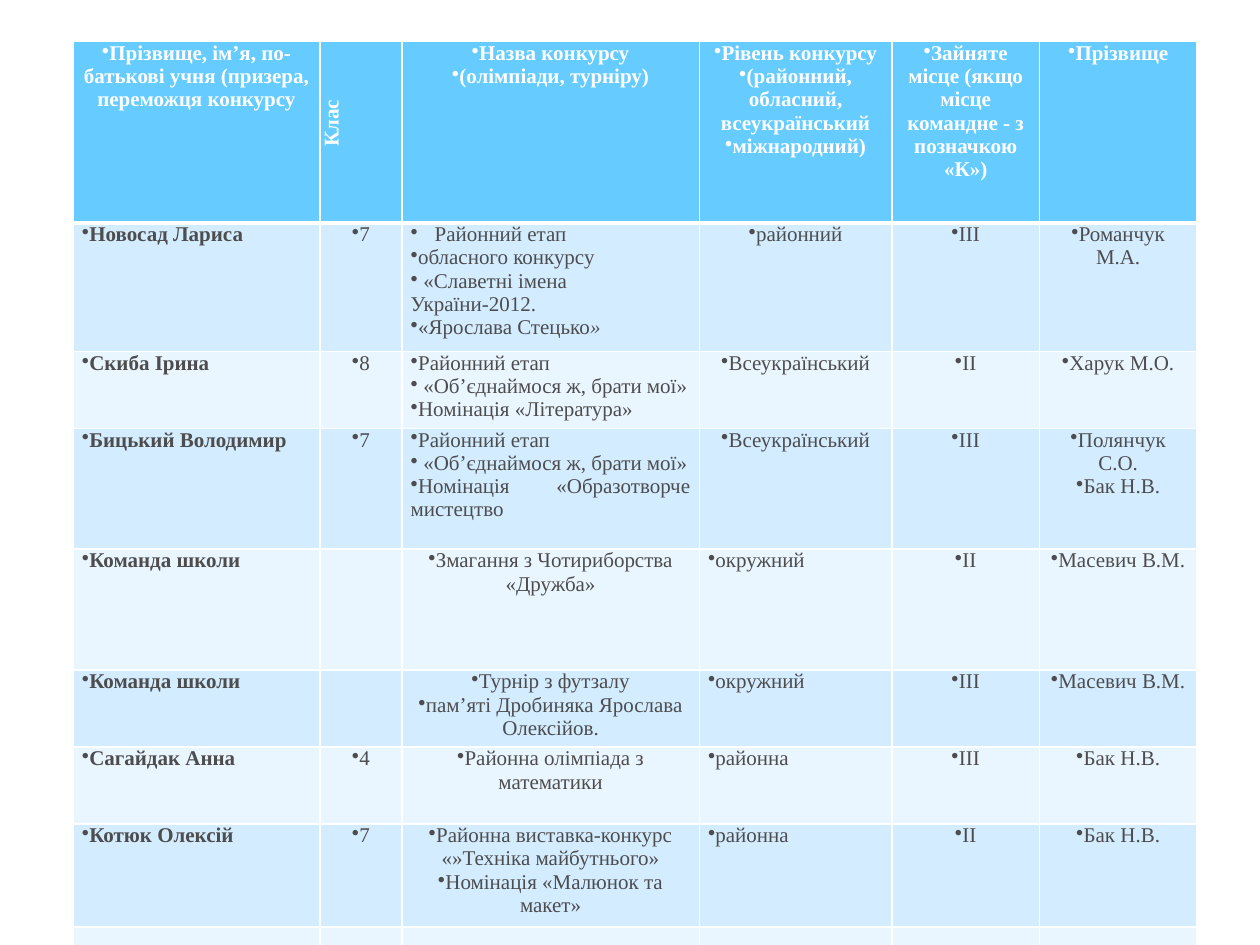
import pptx
import pptx.util
import pptx.dml.color
import pptx.enum.text
import pptx.oxml.ns
from lxml import etree

Inches = pptx.util.Inches
Pt = pptx.util.Pt
ALIGN = pptx.enum.text.PP_ALIGN
qn = pptx.oxml.ns.qn

COLUMN_WIDTHS = [1.96, 0.65, 2.36, 1.53, 1.17, 1.25]
ROW_HEIGHTS = [1.44, 1.02, 0.61, 0.96, 0.96, 0.61, 0.61, 0.82, 0.46]
ROWS = [
    ["Прізвище, ім’я, по-батькові учня (призера, переможця конкурсу", "Клас",
     "Назва конкурсу\n(олімпіади, турніру)",
     "Рівень конкурсу\n(районний, обласний, всеукраїнський\nміжнародний)",
     "Зайняте місце (якщо місце командне - з позначкою «К»)", "Прізвище"],
    ["Новосад Лариса", "7",
     "Районний етап\nобласного конкурсу\n «Славетні імена України-2012.\n«Ярослава Стецько",
     "районний", "ІІІ", "Романчук М.А."],
    ["Скиба Ірина", "8",
     "Районний етап\n «Об’єднаймося ж, брати мої»\nНомінація «Література»",
     "Всеукраїнський", "ІІ", "Харук М.О."],
    ["Бицький Володимир", "7",
     "Районний етап\n «Об’єднаймося ж, брати мої»\nНомінація «Образотворче мистецтво",
     "Всеукраїнський", "ІІІ", "Полянчук С.О.\nБак Н.В."],
    ["Команда школи", "", "Змагання з Чотириборства «Дружба»",
     "окружний", "ІІ", "Масевич В.М."],
    ["Команда школи", "", "Турнір з футзалу\nпам’яті Дробиняка Ярослава Олексійов.",
     "окружний", "ІІІ", "Масевич В.М."],
    ["Сагайдак Анна", "4", "Районна олімпіада з математики",
     "районна", "ІІІ", "Бак Н.В."],
    ["Котюк Олексій", "7",
     "Районна виставка-конкурс «»Техніка майбутнього»\nНомінація «Малюнок та макет»",
     "районна", "ІІ", "Бак Н.В."],
    [""] * 6,
]


def rgb(value):
    return pptx.dml.color.RGBColor.from_string(value)


def is_left(row, column):
    return row > 0 and (column == 0 or column == 2 and row <= 3 or column == 3 and row >= 4)


class Deck:
    font = "Times New Roman"
    size = 12
    header_fill = "66CCFF"
    band_fills = ["EAF6FF", "D3ECFF"]
    white = "FFFFFF"
    body = "4D4D4D"

    def __init__(self, width, height):
        self.prs = pptx.Presentation()
        self.prs.slide_width = Inches(width)
        self.prs.slide_height = Inches(height)
        self.s = self.prs.slides.add_slide(self.prs.slide_layouts[6])

    def style_run(self, r, header, bold):
        r.font.name = self.font
        r.font.size = Pt(self.size)
        r.font.bold = bold
        r.font.color.rgb = rgb(self.white if header else self.body)

    def bullet(self, p, margin=0, indent=0):
        pPr = p._p.get_or_add_pPr()
        pPr.set("marL", str(Inches(margin)))
        pPr.set("indent", str(Inches(indent)))
        etree.SubElement(pPr, qn("a:buChar")).set("char", "•")

    def borders(self, cell, row):
        tcPr = cell._tc.get_or_add_tcPr()
        widths = {"L": 1, "R": 1, "T": 3 if row == 1 else 1, "B": 3 if row == 0 else 1}
        for side, width in widths.items():
            ln = etree.SubElement(tcPr, qn("a:ln" + side), w=str(Pt(width)))
            fill = etree.SubElement(ln, qn("a:solidFill"))
            etree.SubElement(fill, qn("a:srgbClr"), val=self.white)

    def cell(self, cell, text, row, column):
        header = row == 0
        cell.margin_left = cell.margin_right = Inches(0.07)
        cell.margin_top = cell.margin_bottom = 0
        self.borders(cell, row)
        cell.fill.solid()
        cell.fill.fore_color.rgb = rgb(self.header_fill if header else self.band_fills[row % 2])
        if not text:
            return
        cell.text_frame.text = text
        for p in cell.text_frame.paragraphs:
            p.alignment = ALIGN.LEFT if is_left(row, column) else ALIGN.CENTER
            if (row, column) == (0, 1):
                self.bullet(p, margin=0.08)
            elif (row, column) == (1, 2) and p.text == "Районний етап":
                self.bullet(p, margin=0.19, indent=-0.19)
            else:
                self.bullet(p)
            for r in p.runs:
                self.style_run(r, header, header or column == 0)

    def table(self, left, top, widths, heights, rows):
        frame = self.s.shapes.add_table(len(heights), len(widths), Inches(left), Inches(top),
                                        Inches(sum(widths)), Inches(sum(heights)))
        table = frame.table
        table.horz_banding = False
        for column, width in zip(table.columns, widths):
            column.width = Inches(width)
        for row, height in zip(table.rows, heights):
            row.height = Inches(height)
        for i, texts in enumerate(rows):
            for j, text in enumerate(texts):
                self.cell(table.cell(i, j), text, i, j)
        return table


def main():
    deck = Deck(10, 7.5)
    table = deck.table(0.58, 0.33, COLUMN_WIDTHS, ROW_HEIGHTS, ROWS)
    table.cell(0, 1)._tc.get_or_add_tcPr().set("vert", "vert270")
    r = table.cell(1, 2).text_frame.paragraphs[-1].add_run()
    r.text = "»"
    deck.style_run(r, False, False)
    r.font.italic = True
    table.cell(3, 2).text_frame.paragraphs[-1].alignment = ALIGN.JUSTIFY
    deck.prs.save("out.pptx")


if __name__ == "__main__":
    main()
